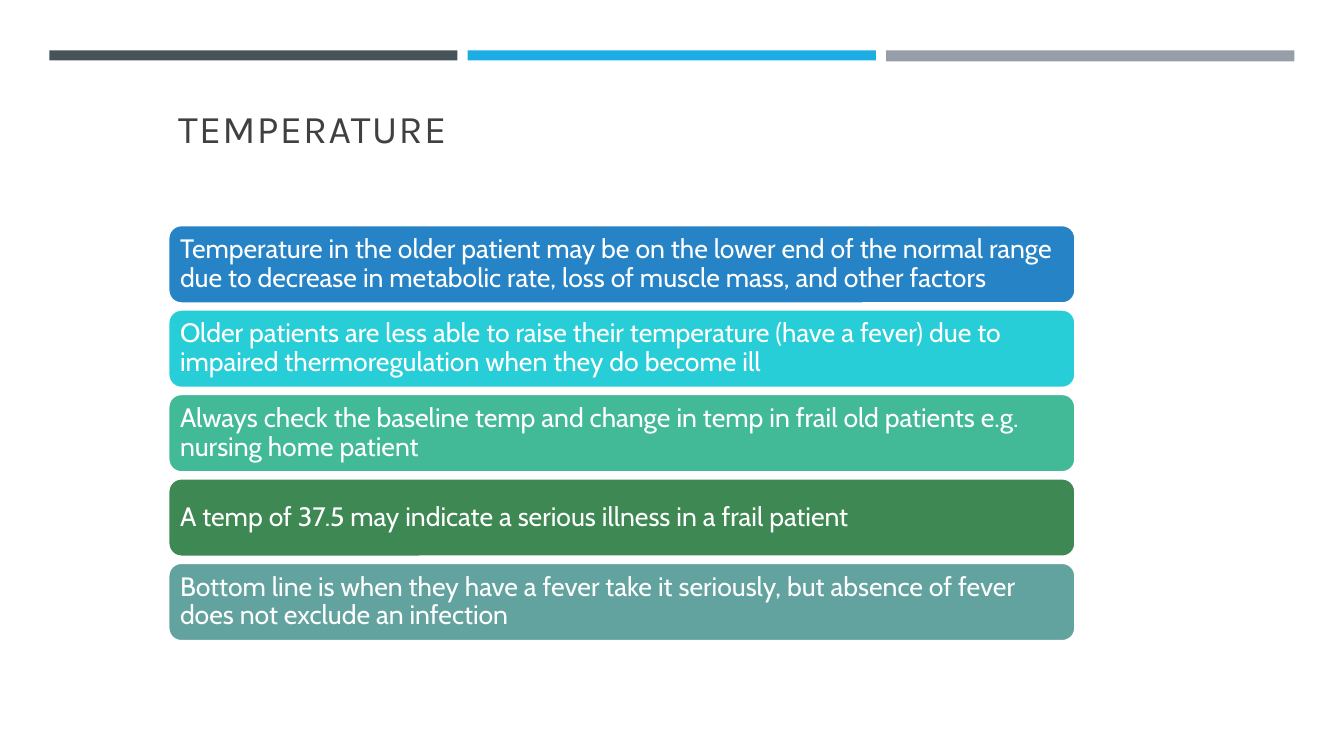
from pptx import Presentation
from pptx.dml.color import RGBColor
from pptx.enum.shapes import MSO_SHAPE
from pptx.enum.text import MSO_ANCHOR, PP_ALIGN
from pptx.util import Pt

WHITE = RGBColor(0xFF, 0xFF, 0xFF)
CHARCOAL = RGBColor(0x40, 0x40, 0x40)
SLATE = RGBColor(0x46, 0x53, 0x59)
SKY = RGBColor(0x1C, 0xAD, 0xE4)
GREY = RGBColor(0x96, 0x9F, 0xA7)
BLUE = RGBColor(0x26, 0x83, 0xC6)
CYAN = RGBColor(0x27, 0xCE, 0xD7)
MINT = RGBColor(0x42, 0xBA, 0x97)
GREEN = RGBColor(0x3E, 0x88, 0x53)
TEAL = RGBColor(0x62, 0xA3, 0x9F)

MESSAGES = [
    (BLUE, "Temperature in the older patient may be on the lower end of the normal range "
           "due to decrease in metabolic rate, loss of muscle mass, and other factors"),
    (CYAN, "Older patients are less able to raise their temperature (have a fever) due to "
           "impaired thermoregulation when they do become ill"),
    (MINT, "Always check the baseline temp and change in temp in frail old patients e.g. "
           "nursing home patient"),
    (GREEN, "A temp of 37.5 may indicate a serious illness in a frail patient"),
    (TEAL, "Bottom line is when they have a fever take it seriously, but absence of fever "
           "does not exclude an infection"),
]


def write_text(text_frame, text, *, font, size, color, anchor, inset, line_spacing=1.0,
               letter_spacing=0):
    text_frame.word_wrap = True
    text_frame.vertical_anchor = anchor
    text_frame.margin_left = text_frame.margin_right = Pt(inset)
    text_frame.margin_top = text_frame.margin_bottom = Pt(3.6)
    paragraph = text_frame.paragraphs[0]
    paragraph.alignment = PP_ALIGN.LEFT
    paragraph.line_spacing = line_spacing
    run = paragraph.add_run()
    run.text = text
    run.font.name = font
    run.font.size = Pt(size)
    run.font.color.rgb = color
    if letter_spacing:
        run.font._element.set("spc", str(round(letter_spacing * 100)))


class SlideBuilder:
    heading_font = "Karla"
    body_font = "Cabin"

    def __init__(self, slide):
        self.slide = slide

    def title(self, text, left, top, width, height):
        shape = self.slide.shapes.title
        shape.left, shape.top, shape.width, shape.height = map(Pt, (left, top, width, height))
        write_text(shape.text_frame, text, font=self.heading_font, size=28, color=CHARCOAL,
                   anchor=MSO_ANCHOR.BOTTOM, inset=7.2, letter_spacing=1)

    def block(self, kind, color, left, top, width, height):
        shape = self.slide.shapes.add_shape(kind, Pt(left), Pt(top), Pt(width), Pt(height))
        shape.shadow.inherit = False
        shape.fill.solid()
        shape.fill.fore_color.rgb = color
        shape.line.fill.background()
        return shape

    def bar(self, color, left, top, width, height):
        self.block(MSO_SHAPE.RECTANGLE, color, left, top, width, height)

    def message(self, color, text, left, top, width, height):
        shape = self.block(MSO_SHAPE.ROUNDED_RECTANGLE, color, left, top, width, height)
        shape.line.color.rgb = WHITE
        shape.line.width = Pt(1.75)
        write_text(shape.text_frame, text, font=self.body_font, size=19, color=WHITE,
                   anchor=MSO_ANCHOR.MIDDLE, inset=5.7, line_spacing=0.9)


def main():
    presentation = Presentation()
    presentation.slide_width, presentation.slide_height = Pt(960), Pt(540)
    title_only_layout = presentation.slide_layouts[5]
    builder = SlideBuilder(presentation.slides.add_slide(title_only_layout))

    # Colour bars across the top
    for index, (color, height) in enumerate([(SLATE, 7.2), (SKY, 7.2), (GREY, 7.9)]):
        builder.bar(color, 35.2 + index * 298.9, 36, 291.6, height)

    # Title
    builder.title("TEMPERATURE", 120, 9.4, 594, 102.2)

    # Stacked messages
    for index, (color, text) in enumerate(MESSAGES):
        builder.message(color, text, 120.2, 160.8 + index * 60.3, 648, 56)

    presentation.save("out.pptx")


if __name__ == "__main__":
    main()
